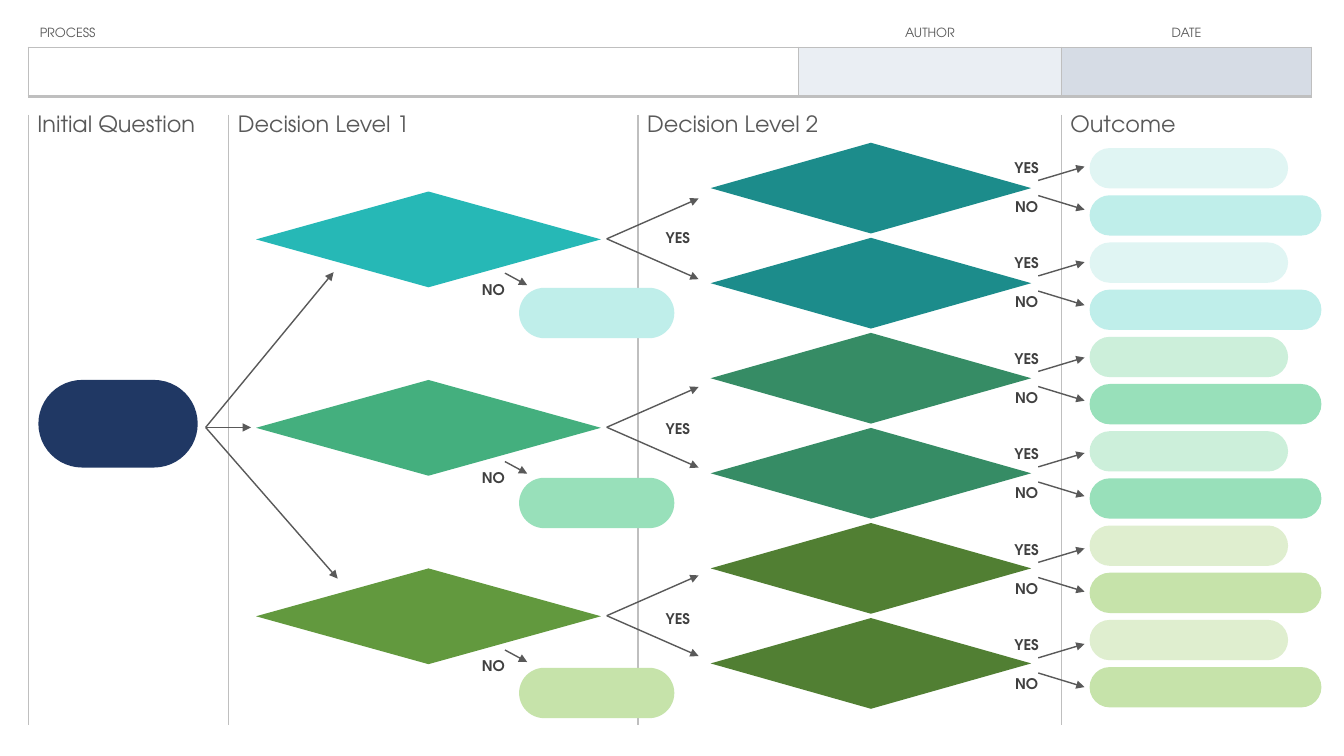
"""Build a decision tree slide with an initial question, two decision levels and outcomes."""
from lxml.etree import SubElement
from pptx import Presentation
from pptx.dml.color import RGBColor as Rgb
from pptx.enum.shapes import MSO_CONNECTOR as Connector, MSO_SHAPE as Shape
from pptx.enum.text import MSO_ANCHOR as Anchor, PP_ALIGN as Align
from pptx.oxml.ns import qn
from pptx.util import Pt

COLORS = {
    "text": "595959", "label": "404040", "rule": "BFBFBF", "start": "203864",
    "process": "FFFFFF", "author": "EAEEF3", "date": "D6DCE5",
}
BRANCHES = [
    {"level1": "26B8B6", "level2": "1C8C8B", "yes": "E0F5F3", "no": "BFEEEA"},
    {"level1": "44AF7E", "level2": "368C65", "yes": "CCEFDA", "no": "98E0BA"},
    {"level1": "62993E", "level2": "517F33", "yes": "DFEECF", "no": "C6E3AA"},
]
BRANCH_STEP, DECISION_STEP, OUTCOME_STEP = 134.6, 68.2, 33.7


def write(frame, text, size, color, align, bold=False):
    para = frame.paragraphs[0]
    para.alignment = align
    span = para.add_run()
    span.text = text
    span.font.color.rgb = Rgb.from_string(color)
    for name, value in {"name": "TeX Gyre Adventor", "size": Pt(size), "bold": bold}.items():
        setattr(span.font, name, value)


def set_borders(cell, widths):
    properties = cell._tc.get_or_add_tcPr()
    for side in "LRTB":
        width = widths.get(side, 0)
        edge = SubElement(properties, qn(f"a:ln{side}"), w=str(int(Pt(width))))
        if width:
            fill = SubElement(edge, qn("a:solidFill"))
            SubElement(fill, qn("a:srgbClr"), val=COLORS["rule"])
        else:
            SubElement(edge, qn("a:noFill"))


deck = Presentation()
deck.slide_width, deck.slide_height = Pt(960), Pt(540)
page = deck.slides.add_slide(deck.slide_layouts[6])

tables = [
    {"top": 82, "rows": [33.1, 402.5], "columns": [143.3, 292.3, 302.4, 178.6],
     "heads": ["Initial Question", "Decision Level 1", "Decision Level 2", "Outcome"],
     "size": 16, "anchor": Anchor.TOP, "fills": []},
    {"top": 13.7, "rows": [20.1, 35.1], "columns": [550.1, 187.9, 178.6],
     "heads": ["PROCESS", "AUTHOR", "DATE"],
     "size": 9, "anchor": Anchor.MIDDLE, "fills": ["process", "author", "date"]},
]
for plan in tables:
    columns, rows, fills = plan["columns"], plan["rows"], plan["fills"]
    grid = page.shapes.add_table(
        2, len(columns), Pt(20.2), Pt(plan["top"]), Pt(sum(columns)), Pt(sum(rows))).table
    grid.first_row = grid.horz_banding = False
    for row, height in zip(grid.rows, rows):
        row.height = Pt(height)
    for index, width in enumerate(columns):
        grid.columns[index].width = Pt(width)
        head, body = grid.cell(0, index), grid.cell(1, index)
        if fills:
            borders = [{"B": 1}, {"L": 1, "R": 1, "T": 1, "B": 2.25}]
        else:
            borders = [{"L": 1, "R": int(index < len(columns) - 1)}] * 2
        for cell, widths in zip((head, body), borders):
            set_borders(cell, widths)
            cell.fill.background()
        if fills:
            body.fill.solid()
            body.fill.fore_color.rgb = Rgb.from_string(COLORS[fills[index]])
        centered = fills and index > 0
        inset = 0.7 if centered else 8.2 if fills else 6.5
        layout = {"margin_left": Pt(inset), "margin_right": Pt(0.7), "margin_top": Pt(0.7),
                  "margin_bottom": 0, "vertical_anchor": plan["anchor"]}
        for name, value in layout.items():
            setattr(head, name, value)
        write(head.text_frame, plan["heads"][index], plan["size"], COLORS["text"],
              Align.CENTER if centered else Align.LEFT)

diamonds = []
pills = [(27.4, 271.4, 113.8, 62.6, COLORS["start"])]
labels = []
arrows = [(146.9, 305.3, x, y) for x, y in ((238.3, 194.4), (179.3, 305.3), (241.2, 413.3))]

for branch, tones in enumerate(BRANCHES):
    shift = branch * BRANCH_STEP
    diamonds.append((182.9, 136.8 + shift, 246.4, 68.4, tones["level1"]))
    pills.append((370.8, 205.6 + branch * 135.7, 110.9, 36, tones["no"]))
    labels += [("NO", 337, 195.8 + shift), ("YES", 468.7, 159.1 + branch * 136.1)]
    arrows.append((360.7, 195.1 + shift, 376.6, 203.7 + shift))
    arrows += [(433.4, 170.6 + shift, 499, 170.6 + shift + rise) for rise in (-28.8, 28.8)]

    for decision in (2 * branch, 2 * branch + 1):
        drop = decision * DECISION_STEP
        diamonds.append((507.6, 102 + decision * 67.9, 229, 64.8, tones["level2"]))
        answers = [("YES", 108.7, 128.9, 119, 141.8), ("NO", 136.8, 139.7, 149.8, 165.6)]
        for order, (answer, label_top, start, end, width) in enumerate(answers):
            labels.append((answer, 717.8, label_top + drop))
            arrows.append((741.6, start + drop, 774.7, end + drop))
            top = 105.8 + (2 * decision + order) * OUTCOME_STEP
            pills.append((778.3, top, width, 28.8, tones[answer.lower()]))

for kind, items in ((Shape.DIAMOND, diamonds), (Shape.ROUNDED_RECTANGLE, pills)):
    for *bounds, color in items:
        box = page.shapes.add_shape(kind, *map(Pt, bounds))
        box.shadow.inherit = False
        box.fill.solid()
        box.fill.fore_color.rgb = Rgb.from_string(color)
        box.line.fill.background()
        if kind == Shape.ROUNDED_RECTANGLE:
            box.adjustments[0] = 0.5

for ends in arrows:
    arrow = page.shapes.add_connector(Connector.STRAIGHT, *map(Pt, ends))
    arrow.line.width = Pt(1)
    arrow.line.color.rgb = Rgb.from_string(COLORS["text"])
    SubElement(arrow.line._get_or_add_ln(), qn("a:tailEnd"), type="triangle")
    SubElement(arrow._element.spPr, qn("a:effectLst"))

for text, left, top in labels:
    frame = page.shapes.add_textbox(Pt(left), Pt(top), Pt(31), Pt(21.6)).text_frame
    layout = {"word_wrap": True, "vertical_anchor": Anchor.MIDDLE}
    layout |= {f"margin_{side}": Pt(1.4) for side in ("left", "right", "top", "bottom")}
    for name, value in layout.items():
        setattr(frame, name, value)
    write(frame, text, 10.5, COLORS["label"], Align.CENTER, bold=True)

deck.save("out.pptx")
